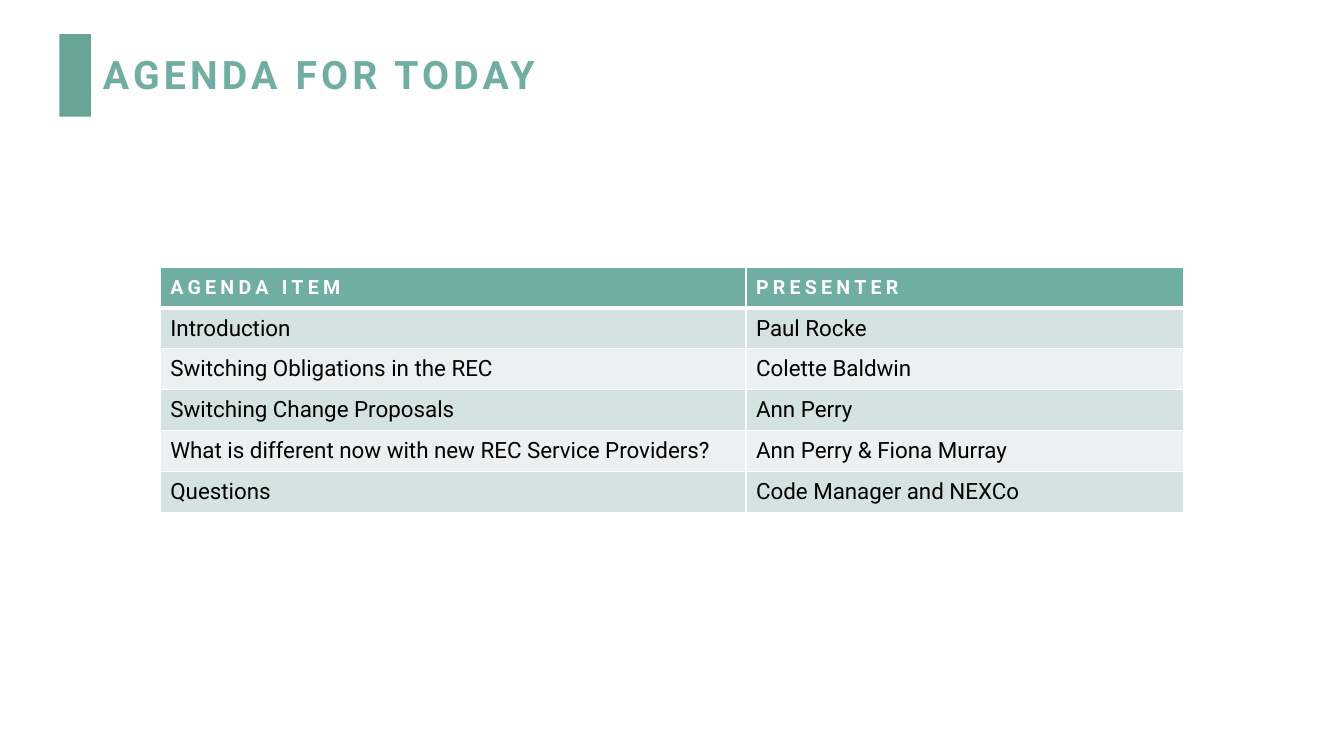
import pptx
import pptx.dml.color
import pptx.enum.shapes
import pptx.enum.text
import pptx.oxml
import pptx.oxml.ns
import pptx.util
from pptx.util import Cm

COLORS = {
    "accent": "68A495",
    "heading": "70ADA3",
    "band_dark": "D5E3E0",
    "band_light": "EBF1F0",
    "white": "FFFFFF",
    "black": "000000",
}
TITLE_FONT = {"name": "Roboto", "size": pptx.util.Pt(28), "bold": True}
HEADER_FONT = {"name": "Roboto", "size": pptx.util.Pt(14), "bold": True}
ITEM_FONT = {"name": "Roboto", "size": pptx.util.Pt(16), "bold": False}
LETTER_SPACING = 3
COLUMN_WIDTHS = (14.76, 11.02)
ROW_HEIGHT = 1.03
AGENDA = (
    ("AGENDA ITEM", "PRESENTER"),
    ("Introduction", "Paul Rocke"),
    ("Switching Obligations in the REC", "Colette Baldwin"),
    ("Switching Change Proposals", "Ann Perry"),
    ("What is different now with new REC Service Providers?", "Ann Perry & Fiona Murray"),
    ("Questions", "Code Manager and NEXCo"),
)


def rgb(color):
    return pptx.dml.color.RGBColor.from_string(COLORS[color])


def write(frame, text, font, color, spacing=0):
    frame.vertical_anchor = pptx.enum.text.MSO_ANCHOR.MIDDLE
    paragraph = frame.paragraphs[0]
    paragraph.alignment = pptx.enum.text.PP_ALIGN.LEFT
    run = paragraph.add_run()
    run.text = text
    for attribute, value in font.items():
        setattr(run.font, attribute, value)
    run.font.color.rgb = rgb(color)
    if spacing:
        run.font._element.set("spc", str(spacing * 100))
    return paragraph


def add_accent_bar(slide):
    bar = slide.shapes.add_shape(
        pptx.enum.shapes.MSO_SHAPE.RECTANGLE, Cm(1.5), Cm(0.86), Cm(0.79), Cm(2.08)
    )
    bar.shadow.inherit = False
    bar.fill.solid()
    bar.fill.fore_color.rgb = rgb("accent")
    bar.line.fill.background()


def set_title(slide, text):
    title = slide.shapes.title
    position = {"left": Cm(2.34), "top": Cm(1.02), "width": Cm(25.78), "height": Cm(1.83)}
    for attribute, value in position.items():
        setattr(title, attribute, value)
    title.text_frame.word_wrap = True
    write(title.text_frame, text, TITLE_FONT, "heading", LETTER_SPACING).line_spacing = 0.9


def set_borders(cell, widths):
    properties = cell._tc.get_or_add_tcPr()
    for side, width in widths.items():
        properties.append(pptx.oxml.parse_xml(
            f'<a:ln{side} {pptx.oxml.ns.nsdecls("a")} w="{pptx.util.Pt(width)}">'
            f'<a:solidFill><a:srgbClr val="{COLORS["white"]}"/></a:solidFill></a:ln{side}>'
        ))


def add_agenda(slide):
    agenda = slide.shapes.add_table(
        len(AGENDA), len(COLUMN_WIDTHS), Cm(4.04), Cm(6.73),
        Cm(sum(COLUMN_WIDTHS)), Cm(ROW_HEIGHT * len(AGENDA)),
    ).table
    for column, width in zip(agenda.columns, COLUMN_WIDTHS):
        column.width = Cm(width)
    for index, (row, entries) in enumerate(zip(agenda.rows, AGENDA)):
        row.height = Cm(ROW_HEIGHT)
        if index == 0:
            fill, font, color, spacing = "heading", HEADER_FONT, "white", LETTER_SPACING
        else:
            fill = "band_dark" if index % 2 else "band_light"
            font, color, spacing = ITEM_FONT, "black", 0
        borders = {"L": 1, "R": 1, "T": 3 if index == 1 else 1, "B": 3 if index == 0 else 1}
        for cell, text in zip(row.cells, entries):
            set_borders(cell, borders)
            cell.fill.solid()
            cell.fill.fore_color.rgb = rgb(fill)
            cell.vertical_anchor = pptx.enum.text.MSO_ANCHOR.MIDDLE
            write(cell.text_frame, text, font, color, spacing)


def main():
    presentation = pptx.Presentation()
    presentation.slide_width = Cm(33.87)
    presentation.slide_height = Cm(19.05)
    slide = presentation.slides.add_slide(presentation.slide_layouts[5])
    add_accent_bar(slide)
    set_title(slide, "AGENDA FOR TODAY")
    add_agenda(slide)
    presentation.save("out.pptx")


if __name__ == "__main__":
    main()
